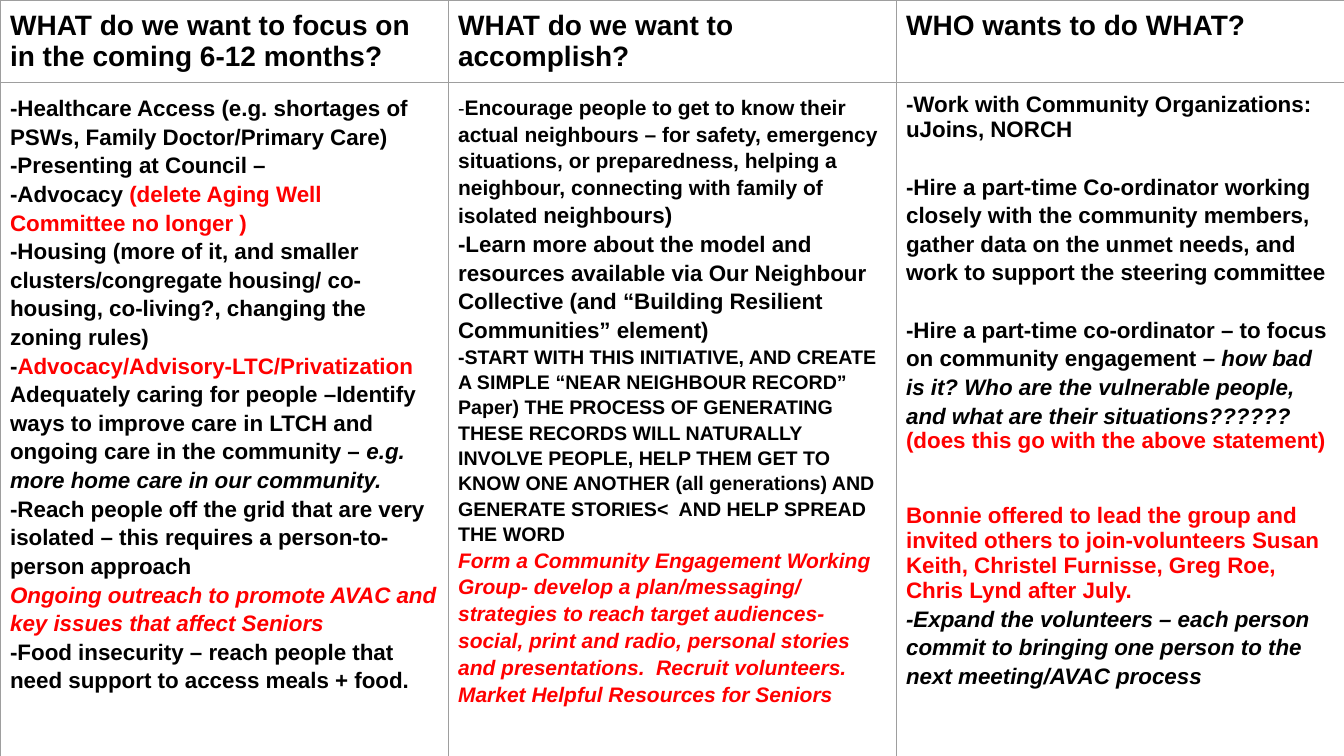
import pptx
import pptx.dml.color
import pptx.enum.text
import pptx.oxml
import pptx.oxml.ns
import pptx.util

Inches = pptx.util.Inches
Pt = pptx.util.Pt

COLORS = {"black": "000000", "red": "FF0000", "border": "9E9E9E"}
FONT = "Arial"
LOOSE, SINGLE = 1.15, 1.0
BLANK_LAYOUT = 6


def span(text, size=16, color="black", bold=True, italic=False):
    """Describe a stretch of text with one format."""
    return {"text": text, "size": size, "color": color, "bold": bold, "italic": italic}


def para(*spans, spacing=LOOSE, before=0):
    """Describe a paragraph made of spans."""
    return {"spans": spans, "spacing": spacing, "before": before}


HEADERS = [
    "WHAT do we want to focus on in the coming 6-12 months?",
    "WHAT do we want to accomplish?",
    "WHO wants to do WHAT?",
]

FOCUS = [
    para(span("-Healthcare Access (e.g. shortages of PSWs, Family Doctor/Primary Care)")),
    para(span("-Presenting at Council –")),
    para(span("-Advocacy"),
         span(" (delete Aging Well Committee no longer )", color="red")),
    para(span("-Housing (more of it, and smaller clusters/congregate housing/ "
              "co-housing, co-living?, changing the zoning rules)")),
    para(span("-"), span("Advocacy/Advisory-LTC/Privatization", color="red")),
    para(span("Adequately caring for people –Identify ways to improve care in LTCH "
              "and ongoing care in the community – "),
         span("e.g. more home care in our community.", italic=True)),
    para(span("-Reach people off the grid that are very isolated – this requires "
              "a person-to-person approach")),
    para(span("Ongoing outreach to promote AVAC and key issues that affect Seniors",
              color="red", italic=True)),
    para(span("-Food insecurity – reach people that need support to access meals + food.")),
]

GOALS = [
    para(span("-", size=14, bold=False),
         span("Encourage people to get to know their actual neighbours – for safety, "
              "emergency situations, or preparedness, helping a neighbour, connecting "
              "with family of isolated ", size=15),
         span("neighbours)")),
    para(span("-Learn more about the model and resources available via Our Neighbour "
              "Collective (and “Building Resilient Communities” element)")),
    para(span("-START WITH THIS INITIATIVE, AND CREATE A SIMPLE “NEAR NEIGHBOUR RECORD” "
              "Paper) THE PROCESS OF GENERATING THESE RECORDS WILL NATURALLY INVOLVE "
              "PEOPLE, HELP THEM GET TO KNOW ONE ANOTHER (all generations) AND GENERATE "
              "STORIES<  AND HELP SPREAD THE WORD", size=14)),
    para(span("Form a Community Engagement Working", size=15, color="red", italic=True)),
    para(span("Group- develop a plan/messaging/ strategies to reach target audiences- "
              "social, print and radio, personal stories and presentations.  Recruit "
              "volunteers. Market Helpful Resources for Seniors",
              size=15, color="red", italic=True)),
]

PEOPLE = [
    para(span("-Work with Community Organizations: uJoins, NORCH"), spacing=SINGLE),
    para(span("-Hire a part-time Co-ordinator working closely with the community members, "
              "gather data on the unmet needs, and work to support the steering committee"),
         before=20.5),
    para(span("-Hire a part-time co-ordinator – to focus on community engagement "),
         span("– how bad is it? Who are the vulnerable people, and what are their "
              "situations??????", italic=True), before=20.5),
    para(span("(does this go with the above statement)", color="red"), spacing=SINGLE),
    para(span("Bonnie offered to lead the group and invited others to join-volunteers "
              "Susan Keith, Christel Furnisse, Greg Roe, Chris Lynd after July.",
              color="red"), spacing=SINGLE, before=35.7),
    para(span("-Expand the volunteers – each person commit to bringing one person to "
              "the next meeting/AVAC process", italic=True)),
]


def write_paragraph(paragraph, content):
    """Fill a paragraph with formatted spans."""
    paragraph.alignment = pptx.enum.text.PP_ALIGN.LEFT
    paragraph.line_spacing = content["spacing"]
    paragraph.space_before = Pt(content["before"])
    for part in content["spans"]:
        run = paragraph.add_run()
        run.text = part["text"]
        run.font.name = FONT
        run.font.size = Pt(part["size"])
        run.font.bold = part["bold"]
        run.font.italic = part["italic"]
        run.font.color.rgb = pptx.dml.color.RGBColor.from_string(COLORS[part["color"]])


def draw_borders(cell):
    """Give a cell a thin grey line on all four sides."""
    properties = cell._tc.get_or_add_tcPr()
    for position, side in enumerate(("lnL", "lnR", "lnT", "lnB")):
        line = pptx.oxml.parse_xml(
            f'<a:{side} {pptx.oxml.ns.nsdecls("a")} w="{Pt(0.75)}"><a:solidFill>'
            f'<a:srgbClr val="{COLORS["border"]}"/></a:solidFill></a:{side}>')
        properties.insert(position, line)


def fill_cell(cell, contents):
    """Write paragraphs into a cell and set its margins, fill and borders."""
    cell.margin_left = cell.margin_right = Inches(0.1)
    cell.margin_top = cell.margin_bottom = Inches(0.1)
    cell.vertical_anchor = pptx.enum.text.MSO_ANCHOR.TOP
    cell.fill.background()
    draw_borders(cell)
    frame = cell.text_frame
    for index, content in enumerate(contents):
        paragraph = frame.add_paragraph() if index else frame.paragraphs[0]
        write_paragraph(paragraph, content)


def add_planning_table(page, width):
    """Add the three-column planning table."""
    header_height, body_height = Inches(0.81), Inches(7.46)
    table = page.shapes.add_table(
        2, len(HEADERS), 0, 0, width, header_height + body_height).table
    table.first_row = False
    table.horz_banding = False
    table.rows[0].height = header_height
    table.rows[1].height = body_height
    for column, (header, body) in enumerate(zip(HEADERS, (FOCUS, GOALS, PEOPLE))):
        fill_cell(table.cell(0, column), [para(span(header, size=20), spacing=SINGLE)])
        fill_cell(table.cell(1, column), body)


def main():
    """Build and save the deck."""
    deck = pptx.Presentation()
    deck.slide_width = Inches(13.33)
    deck.slide_height = Inches(7.5)
    page = deck.slides.add_slide(deck.slide_layouts[BLANK_LAYOUT])
    add_planning_table(page, deck.slide_width)
    deck.save("out.pptx")


if __name__ == "__main__":
    main()
